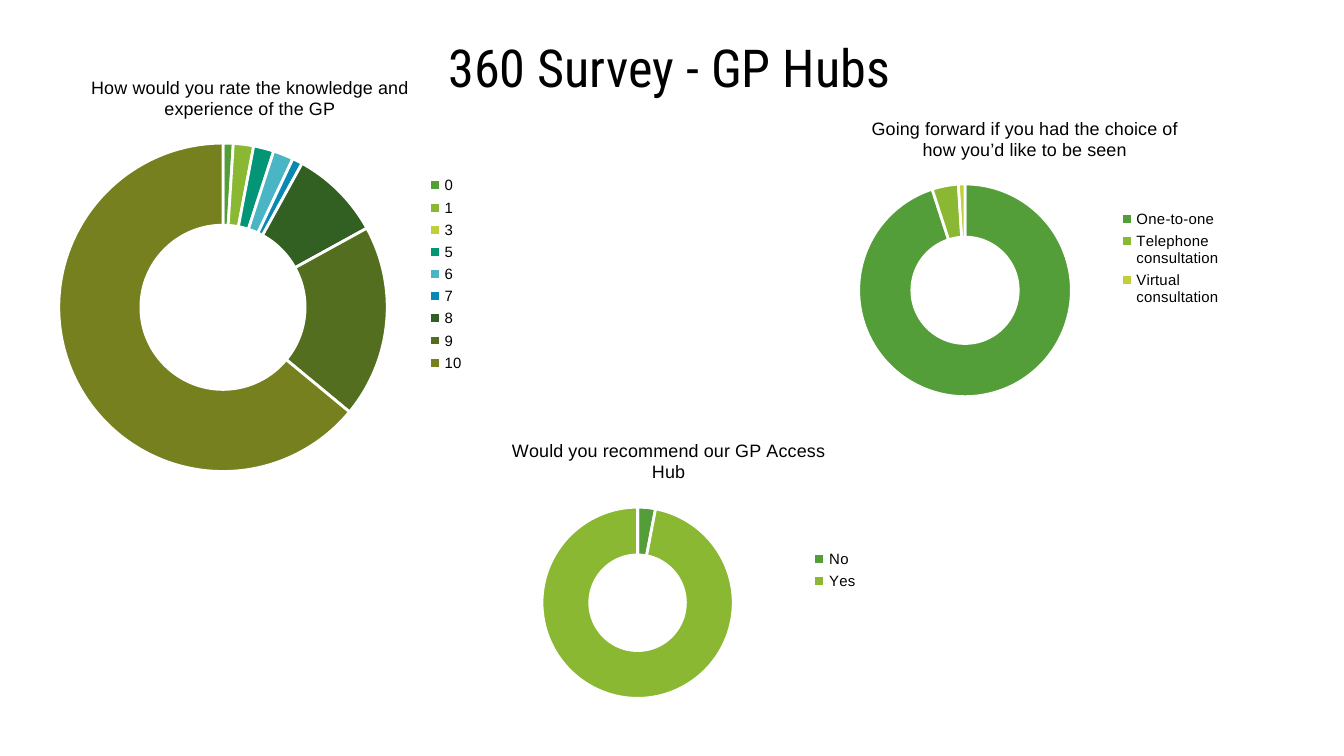
import pptx
import pptx.chart.data
import pptx.dml.color
import pptx.enum.chart
import pptx.enum.text
import pptx.oxml
import pptx.oxml.ns
import pptx.util

Pt = pptx.util.Pt
qn = pptx.oxml.ns.qn

COLORS = {
    "text": "000000",
    "gap": "FFFFFF",
    "green": "549E39",
    "lime": "8AB833",
    "yellow": "C0CF3A",
    "teal": "029676",
    "sky": "4AB5C4",
    "blue": "0989B1",
    "forest": "325F22",
    "moss": "536E1F",
    "olive": "76801F",
}
SLICE_COLORS = ["green", "lime", "yellow", "teal", "sky", "blue", "forest", "moss", "olive"]

# frame: left, top, width, height; ring: centre x, centre y, diameter
SURVEY_QUESTIONS = [
    {
        "question": "How would you rate the knowledge and experience of the GP",
        "answers": {"0": 1, "1": 2, "3": 0, "5": 2, "6": 2, "7": 1, "8": 9, "9": 19, "10": 64},
        "frame": (11.5, 30.2, 244.8, 233.3),
        "ring": (119.5, 164.7, 176),
    },
    {
        "question": "Going forward if you had the choice of how you’d like to be seen",
        "answers": {"One-to-one": 95, "Telephone consultation": 4, "Virtual consultation": 1},
        "frame": (436.3, 53.3, 225.4, 169.9),
        "ring": (517, 155.6, 114),
    },
    {
        "question": "Would you recommend our GP Access Hub",
        "answers": {"No": 3, "Yes": 97},
        "frame": (249.1, 226.1, 218.2, 158.4),
        "ring": (341.6, 323, 102.5),
    },
]


def rgb(name):
    return pptx.dml.color.RGBColor.from_string(COLORS[name])


def style_font(font, face, size):
    font.name = face
    font.size = Pt(size)
    font.bold = False
    font.color.rgb = rgb("text")


presentation = pptx.Presentation()
presentation.slide_width = Pt(720)
presentation.slide_height = Pt(405)
slide = presentation.slides.add_slide(presentation.slide_layouts[5])

# Heading
heading = slide.shapes.title
heading.left, heading.top, heading.width, heading.height = Pt(23), Pt(13), Pt(671), Pt(45.4)
heading_frame = heading.text_frame
heading_frame.text = "360 Survey - GP Hubs"
heading_frame.auto_size = pptx.enum.text.MSO_AUTO_SIZE.NONE
heading_frame.vertical_anchor = pptx.enum.text.MSO_ANCHOR.MIDDLE
heading_frame.margin_left = heading_frame.margin_right = Pt(7.2)
heading_frame.margin_top = heading_frame.margin_bottom = Pt(7.2)
heading_frame.paragraphs[0].alignment = pptx.enum.text.PP_ALIGN.CENTER
style_font(heading_frame.paragraphs[0].runs[0].font, "Roboto Condensed", 28)

# One doughnut per survey question
for survey in SURVEY_QUESTIONS:
    left, top, width, height = survey["frame"]
    center_x, center_y, diameter = survey["ring"]

    responses = pptx.chart.data.CategoryChartData()
    responses.categories = list(survey["answers"])
    responses.add_series("Series 1", list(survey["answers"].values()))
    chart = slide.shapes.add_chart(
        pptx.enum.chart.XL_CHART_TYPE.DOUGHNUT,
        Pt(left), Pt(top), Pt(width), Pt(height), responses,
    ).chart
    style_font(chart.font, "Arial", 8)

    # Question and legend
    chart.has_title = True
    chart.chart_title.include_in_layout = False
    question = chart.chart_title.text_frame
    question.text = survey["question"]
    style_font(question.paragraphs[0].runs[0].font, "Arial", 9.6)
    chart.has_legend = True
    chart.legend.position = pptx.enum.chart.XL_LEGEND_POSITION.RIGHT
    chart.legend.include_in_layout = False
    style_font(chart.legend.font, "Arial", 8)

    # Slices
    rings = chart.plots[0]
    rings.vary_by_categories = True
    for index, color in enumerate(SLICE_COLORS[:len(survey["answers"])]):
        slice_format = rings.series[0].points[index].format
        slice_format.fill.solid()
        slice_format.fill.fore_color.rgb = rgb(color)
        slice_format.line.color.rgb = rgb("gap")
        slice_format.line.width = Pt(1.5)

    # Hole size and ring position, as fractions of the chart frame
    plot_area = chart.element.find(".//" + qn("c:plotArea"))
    plot_area.find(".//" + qn("c:holeSize")).set("val", "75")
    for automatic_layout in plot_area.findall(qn("c:layout")):
        plot_area.remove(automatic_layout)
    placement = {
        "layoutTarget": "inner",
        "xMode": "edge",
        "yMode": "edge",
        "x": (center_x - diameter / 2 - left) / width,
        "y": (center_y - diameter / 2 - top) / height,
        "w": diameter / width,
        "h": diameter / height,
    }
    settings = "".join(f'<c:{key} val="{value}"/>' for key, value in placement.items())
    plot_area.insert(0, pptx.oxml.parse_xml(
        f'<c:layout {pptx.oxml.ns.nsdecls("c")}><c:manualLayout>{settings}'
        "</c:manualLayout></c:layout>"
    ))

presentation.save("out.pptx")
